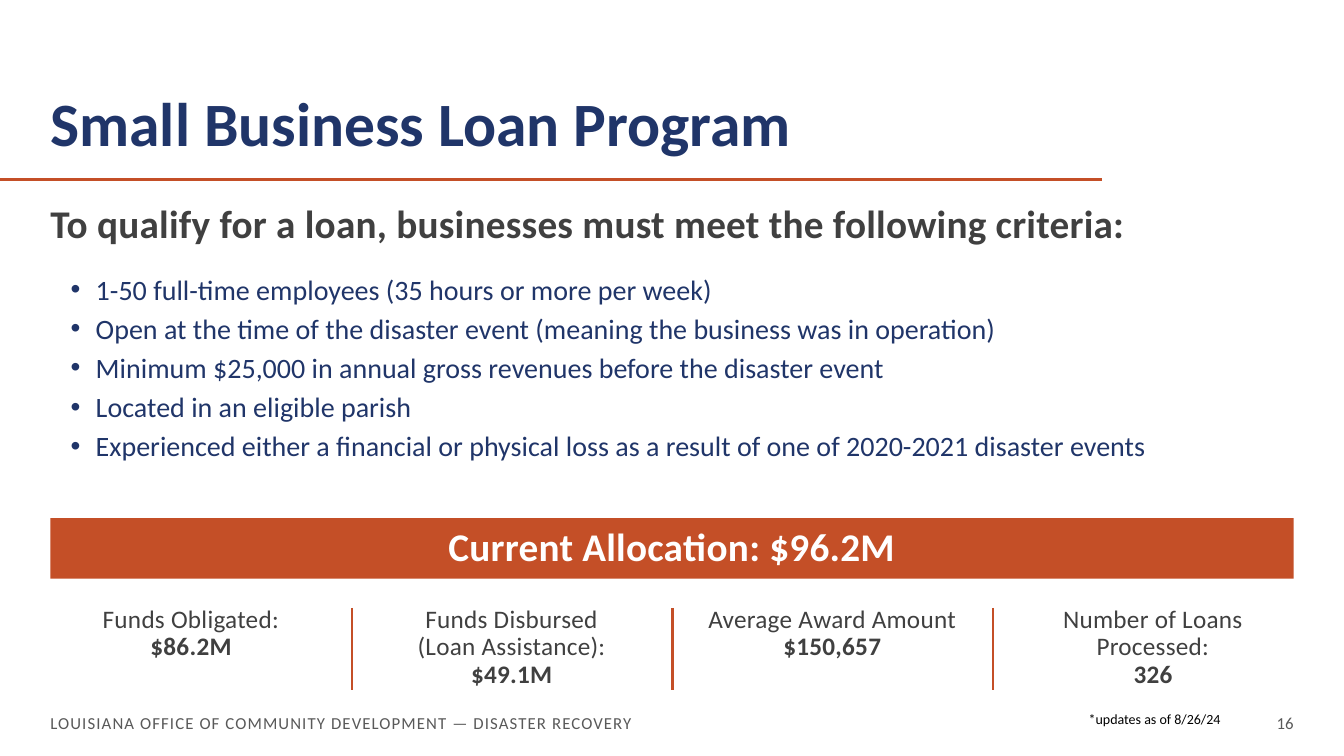
import pptx
import pptx.dml.color
import pptx.enum.shapes
import pptx.enum.text
import pptx.oxml
import pptx.oxml.ns
import pptx.util
import lxml.etree

PX = 9144
FONT = "Calibri"
COLORS = {
    "navy": "203569",
    "rust": "C44F27",
    "charcoal": "404040",
    "gray": "595959",
    "white": "FFFFFF",
    "black": "000000",
}
ALIGN = pptx.enum.text.PP_ALIGN
ANCHOR = pptx.enum.text.MSO_ANCHOR


def px(value):
    return pptx.util.Emu(value * PX)


def rgb(name):
    return pptx.dml.color.RGBColor.from_string(COLORS[name])


class SlideBuilder:
    def __init__(self, slide):
        self.slide = slide

    def fill_text(self, shape, lines, size, color, bold=False, align=ALIGN.LEFT,
                  anchor=ANCHOR.TOP, inset=(0, 0), line_spacing=1.0,
                  letter_spacing=0, bold_last=False, bullet=False):
        frame = shape.text_frame
        frame.word_wrap = True
        frame.vertical_anchor = anchor
        frame.margin_left = frame.margin_right = px(inset[0])
        frame.margin_top = frame.margin_bottom = px(inset[1])
        for index, line in enumerate(lines):
            paragraph = frame.add_paragraph() if index else frame.paragraphs[0]
            paragraph.text = line
            paragraph.alignment = align
            paragraph.line_spacing = line_spacing
            paragraph.space_before = pptx.util.Pt(4 if index else 0)
            if bullet:
                self.add_bullet(paragraph)
            for run in paragraph.runs:
                run.font.name = FONT
                run.font.size = pptx.util.Pt(size)
                run.font.bold = bold
                run.font.color.rgb = rgb(color)
                if letter_spacing:
                    run._r.get_or_add_rPr().set("spc", str(letter_spacing))
            if bold_last:
                paragraph.runs[-1].font.bold = True

    def add_bullet(self, paragraph):
        properties = paragraph._p.get_or_add_pPr()
        properties.set("marL", str(px(45)))
        properties.set("indent", str(px(-25)))
        for tag, name, value in (("a:buFont", "typeface", "Arial"), ("a:buChar", "char", "•")):
            element = lxml.etree.SubElement(properties, pptx.oxml.ns.qn(tag))
            element.set(name, value)

    def text(self, left, top, width, height, lines, size, color, **style):
        shape = self.slide.shapes.add_textbox(px(left), px(top), px(width), px(height))
        self.fill_text(shape, lines, size, color, **style)

    def banner(self, left, top, width, height, fill, lines, size, color, **style):
        shape = self.slide.shapes.add_shape(
            pptx.enum.shapes.MSO_SHAPE.RECTANGLE, px(left), px(top), px(width), px(height))
        shape.shadow.inherit = False
        shape.fill.solid()
        shape.fill.fore_color.rgb = rgb(fill)
        shape.line.fill.background()
        self.fill_text(shape, lines, size, color, **style)

    def line(self, x1, y1, x2, y2, color, weight):
        connector = self.slide.shapes.add_connector(
            pptx.enum.shapes.MSO_CONNECTOR.STRAIGHT, px(x1), px(y1), px(x2), px(y2))
        connector.line.color.rgb = rgb(color)
        connector.line.width = pptx.util.Pt(weight)
        lxml.etree.SubElement(connector._element.spPr, pptx.oxml.ns.qn("a:effectLst"))


CRITERIA = [
    "1-50 full-time employees (35 hours or more per week)",
    "Open at the time of the disaster event (meaning the business was in operation)",
    "Minimum $25,000 in annual gross revenues before the disaster event",
    "Located in an eligible parish",
    "Experienced either a financial or physical loss as a result of one of 2020-2021 disaster events",
]
FIGURES = [
    "Funds Obligated:\v$86.2M",
    "Funds Disbursed\v(Loan Assistance):\v$49.1M",
    "Average Award Amount\v$150,657",
    "Number of Loans Processed:\v326",
]
MARGIN = 50
CONTENT_WIDTH = 1233
FIGURE_WIDTH = 279
FIGURE_PITCH = (CONTENT_WIDTH - FIGURE_WIDTH) // (len(FIGURES) - 1)
GAP = FIGURE_PITCH - FIGURE_WIDTH


def main():
    presentation = pptx.Presentation()
    presentation.slide_width = px(1333)
    presentation.slide_height = px(750)
    builder = SlideBuilder(presentation.slides.add_slide(presentation.slide_layouts[6]))

    builder.line(0, 178, 1093, 178, "rust", 2.25)
    builder.text(MARGIN, 44, 1043, 115, ["Small Business Loan Program"], 44, "navy",
                 bold=True, anchor=ANCHOR.BOTTOM, line_spacing=0.9)
    builder.text(MARGIN, 203, 1098, 44,
                 ["To qualify for a loan, businesses must meet the following criteria:"],
                 28, "charcoal", bold=True, line_spacing=0.9, letter_spacing=20)
    builder.text(MARGIN, 270, CONTENT_WIDTH, 206, CRITERIA, 20, "navy", bullet=True)
    builder.banner(MARGIN, 514, CONTENT_WIDTH, 60, "rust", ["Current Allocation: $96.2M"],
                   28, "white", bold=True, align=ALIGN.CENTER, anchor=ANCHOR.MIDDLE,
                   inset=(10, 10), line_spacing=0.9, letter_spacing=20)

    for index, figure in enumerate(FIGURES):
        left = MARGIN + index * FIGURE_PITCH
        builder.text(left, 602, FIGURE_WIDTH, 84, [figure], 18, "charcoal",
                     align=ALIGN.CENTER, line_spacing=0.9, letter_spacing=20, bold_last=True)
        if index:
            divider = left - GAP // 2
            builder.line(divider, 603, divider, 685, "rust", 1.5)

    builder.text(MARGIN, 700, 667, 35,
                 ["LOUISIANA OFFICE OF COMMUNITY DEVELOPMENT — DISASTER RECOVERY"],
                 12, "gray", anchor=ANCHOR.MIDDLE, letter_spacing=80)
    builder.text(983, 700, 300, 35, ["16"], 12, "gray",
                 align=ALIGN.RIGHT, anchor=ANCHOR.MIDDLE)
    builder.text(1070, 700, 230, 27, ["*updates as of 8/26/24"], 10, "black", inset=(10, 5))

    presentation.save("out.pptx")


if __name__ == "__main__":
    main()
